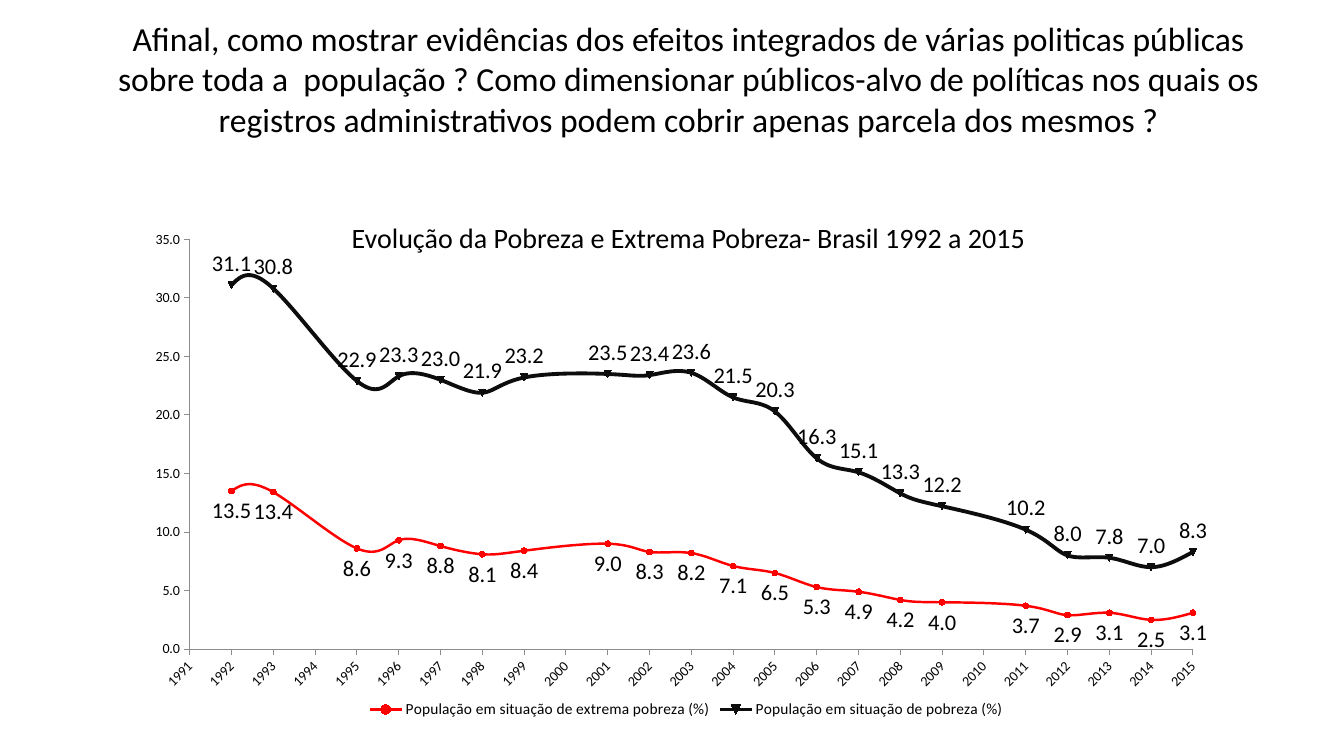
from lxml import etree
from pptx import Presentation
from pptx.chart.data import XyChartData
from pptx.chart.datalabel import DataLabels
from pptx.dml.color import RGBColor
from pptx.enum.chart import (XL_CHART_TYPE, XL_LABEL_POSITION, XL_LEGEND_POSITION,
                             XL_MARKER_STYLE, XL_TICK_MARK)
from pptx.enum.text import PP_ALIGN
from pptx.oxml.ns import qn
from pptx.util import Emu, Pt

PX = 914400 / 100.8
FONT = "Calibri"
BLACK, AXIS_GREY = "000000", "8C8C8C"
SMOOTH_SCATTER = XL_CHART_TYPE.XY_SCATTER_SMOOTH
BELOW, ABOVE = XL_LABEL_POSITION.BELOW, XL_LABEL_POSITION.ABOVE
BOTTOM = XL_LEGEND_POSITION.BOTTOM
CIRCLE, AUTOMATIC = XL_MARKER_STYLE.CIRCLE, XL_MARKER_STYLE.AUTOMATIC
OUTSIDE, NO_TICK = XL_TICK_MARK.OUTSIDE, XL_TICK_MARK.NONE
CENTER = PP_ALIGN.CENTER

QUESTION = ("Afinal, como mostrar evidências dos efeitos integrados de várias politicas "
            "públicas sobre toda a  população ? Como dimensionar públicos-alvo de políticas "
            "nos quais os registros administrativos podem cobrir apenas parcela dos mesmos ?")
CHART_HEADING = "Evolução da Pobreza e Extrema Pobreza- Brasil 1992 a 2015"
YEARS_WITHOUT_SURVEY = (1994, 2000, 2010)
YEARS = [year for year in range(1992, 2016) if year not in YEARS_WITHOUT_SURVEY]
EXTREME_POVERTY = [13.5, 13.4, 8.6, 9.3, 8.8, 8.1, 8.4, 9.0, 8.3, 8.2, 7.1, 6.5, 5.3, 4.9,
                   4.2, 4.0, 3.7, 2.9, 3.1, 2.5, 3.1]
POVERTY = [31.1, 30.8, 22.9, 23.3, 23.0, 21.9, 23.2, 23.5, 23.4, 23.6, 21.5, 20.3, 16.3,
           15.1, 13.3, 12.2, 10.2, 8.0, 7.8, 7.0, 8.3]
INDICATORS = [
    ("População em situação de extrema pobreza (%)", EXTREME_POVERTY,
     "FF0000", 1.75, CIRCLE, 4, BELOW),
    ("População em situação de pobreza (%)", POVERTY,
     "0D0D0D", 2.75, AUTOMATIC, 5, ABOVE),
]


def box(*lengths):
    """Turn pixel lengths into EMU."""
    return [Emu(round(length * PX)) for length in lengths]


def color(hex_code):
    """Turn a hex string into a colour."""
    return RGBColor.from_string(hex_code)


def style_font(font, size, hex_code=BLACK):
    """Give a font the slide's typeface, a size and a colour."""
    font.name = FONT
    font.size = Pt(size)
    font.bold = False
    font.color.rgb = color(hex_code)


def add_headings(slide):
    """Add the question and, lower down, the heading of the chart."""
    frame = slide.shapes.add_textbox(*box(89, 13, 1199, 126)).text_frame
    frame.word_wrap = True
    frame.text = QUESTION
    heading = frame.add_paragraph()
    heading.text = CHART_HEADING
    heading.space_before = Pt(58.6)
    for paragraph, size in zip(frame.paragraphs, (24, 20)):
        paragraph.alignment = CENTER
        style_font(paragraph.runs[0].font, size)


def style_axis(axis, low, high, step, number_format):
    """Set the scale and look of one axis."""
    axis.minimum_scale, axis.maximum_scale, axis.major_unit = low, high, step
    axis.has_major_gridlines = False
    axis.has_title = False
    axis.major_tick_mark = OUTSIDE
    axis.minor_tick_mark = NO_TICK
    axis.format.line.color.rgb = color(AXIS_GREY)
    axis.format.line.width = Pt(0.75)
    labels = axis.tick_labels
    labels.number_format = number_format
    labels.number_format_is_linked = False
    style_font(labels.font, 10)


def style_indicator(series, hex_code, width, symbol, symbol_size, label_place):
    """Set the line, markers and value labels of one indicator."""
    series.format.line.color.rgb = color(hex_code)
    series.format.line.width = Pt(width)
    marker = series.marker
    marker.style = symbol
    marker.size = symbol_size
    marker.format.fill.solid()
    marker.format.fill.fore_color.rgb = color(hex_code)
    marker.format.line.color.rgb = color(hex_code)
    labels = DataLabels(series._element.get_or_add_dLbls())
    labels.show_value = True
    labels.position = label_place
    labels.number_format = "#,##0.0"
    labels.number_format_is_linked = False
    style_font(labels.font, 16)


def place_plot(chart, x, y, w, h):
    """Fix the inner plot area as fractions of the chart."""
    plot_area = chart.plots[0]._element.getparent()
    for old_layout in plot_area.findall(qn("c:layout")):
        plot_area.remove(old_layout)
    layout = etree.Element(qn("c:layout"))
    manual = etree.SubElement(layout, qn("c:manualLayout"))
    settings = [("layoutTarget", "inner"), ("xMode", "edge"), ("yMode", "edge"),
                ("x", x), ("y", y), ("w", w), ("h", h)]
    for tag, value in settings:
        etree.SubElement(manual, qn(f"c:{tag}")).set("val", str(value))
    plot_area.insert(0, layout)


def add_poverty_chart(slide):
    """Add the smoothed scatter chart of both poverty indicators."""
    data = XyChartData(number_format="0.0")
    for name, rates, *_ in INDICATORS:
        points = data.add_series(name)
        for year, rate in zip(YEARS, rates):
            points.add_data_point(year, rate)
    chart = slide.shapes.add_chart(SMOOTH_SCATTER, *box(143, 231, 1087, 492), data).chart
    style_font(chart.font, 10)
    chart.has_title = False
    chart.has_legend = True
    chart.legend.position = BOTTOM
    chart.legend.include_in_layout = False
    style_font(chart.legend.font, 11)
    style_axis(chart.category_axis, 1991, 2015, 1, "0")
    style_axis(chart.value_axis, 0, 35, 5, "0.0")
    year_text = chart.category_axis._element.find(qn("c:txPr"))
    year_text.find(qn("a:bodyPr")).set("rot", "-2700000")
    chart.plots[0].vary_by_categories = False
    for series, (_, _, *look) in zip(chart.plots[0].series, INDICATORS):
        series._element.get_or_add_smooth().val = True
        style_indicator(series, *look)
    place_plot(chart, 0.043, 0.017, 0.923, 0.833)


def main():
    """Build and save the slide."""
    deck = Presentation()
    deck.slide_width, deck.slide_height = box(1344, 756)
    slide = deck.slides.add_slide(deck.slide_layouts[6])
    add_headings(slide)
    add_poverty_chart(slide)
    deck.save("out.pptx")


if __name__ == "__main__":
    main()
